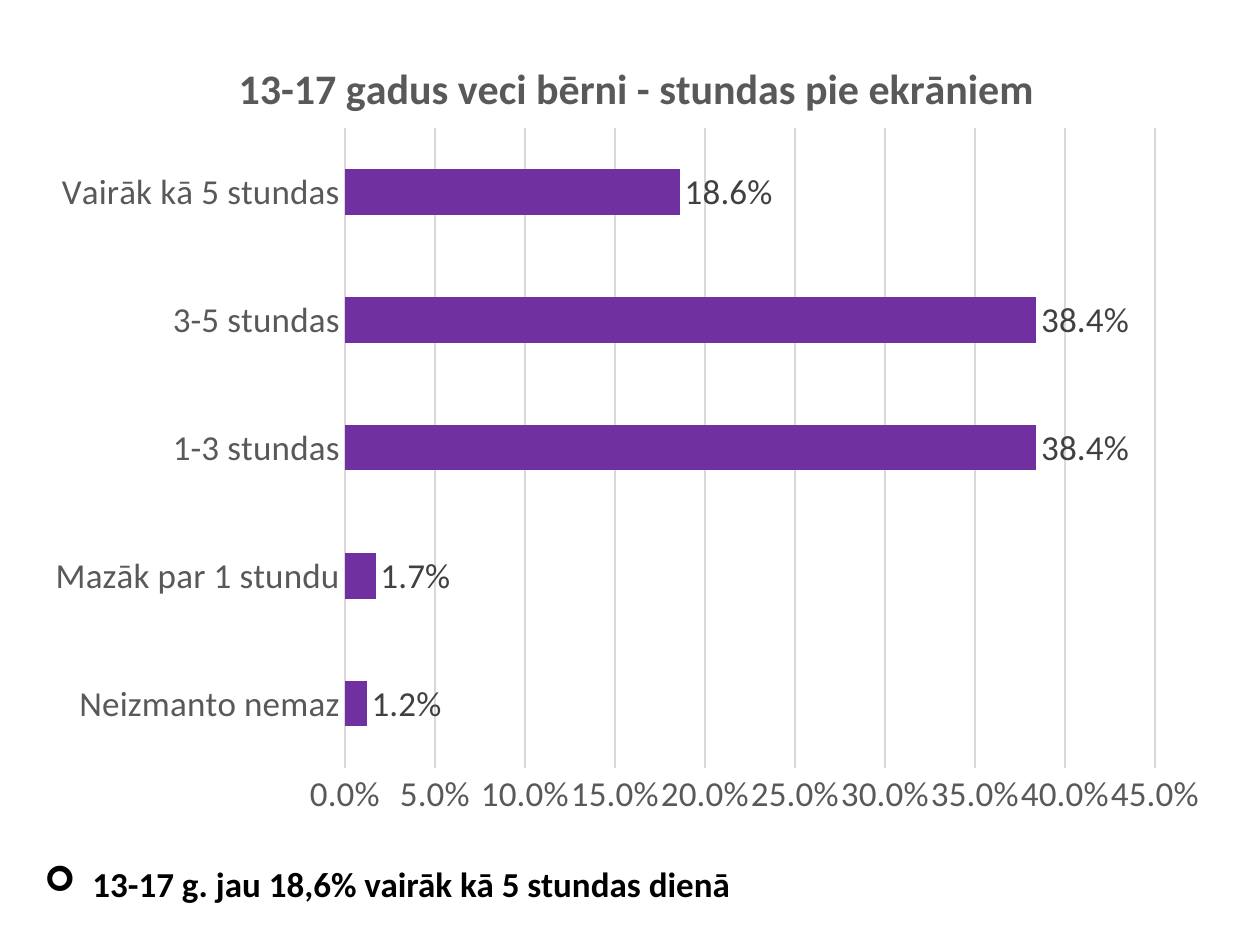
"""Build a slide with a bar chart of screen hours among 13-17 year olds."""
from dataclasses import dataclass

from lxml import etree
from pptx import Presentation, util as u
from pptx.chart import data
from pptx.dml.color import RGBColor
from pptx.enum import chart as charts, text
from pptx.oxml import ns

PX = u.Inches(1) / 126


@dataclass(frozen=True)
class Theme:
    font: str = "Calibri"
    body: int = 20
    heading: int = 24
    ink: str = "000000"
    label: str = "404040"
    muted: str = "595959"
    grid: str = "D9D9D9"
    bar: str = "7030A0"


theme = Theme()


def write(frame, content, **style):
    """Put content in the first paragraph, or only style a bare font owner."""
    font = frame.font if content is None else None
    if font is None:
        para = frame.paragraphs[0]
        span = para.add_run()
        span.text = content
        font = span.font
    font.name = theme.font
    font.size = u.Pt(style.get("size", theme.body))
    font.bold = style.get("bold", False)
    font.color.rgb = RGBColor.from_string(style.get("color", theme.ink))


def place(element, index, **fractions):
    """Give a chart part a manual layout."""
    for old in element.findall(ns.qn("c:layout")):
        element.remove(old)
    layout = etree.Element(ns.qn("c:layout"))
    manual = etree.SubElement(layout, ns.qn("c:manualLayout"))
    if "w" in fractions:
        etree.SubElement(manual, ns.qn("c:layoutTarget"), val="inner")
    for name in "xy":
        etree.SubElement(manual, ns.qn(f"c:{name}Mode"), val="edge")
    for name, value in fractions.items():
        etree.SubElement(manual, ns.qn(f"c:{name}"), val=f"{value:.4f}")
    element.insert(index, layout)


deck = Presentation()
deck.slide_width, deck.slide_height = round(1260 * PX), round(945 * PX)
page = deck.slides.add_slide(deck.slide_layouts[6])

hours = {
    "Neizmanto nemaz": 0.012,
    "Mazāk par 1 stundu": 0.017,
    "1-3 stundas": 0.384,
    "3-5 stundas": 0.384,
    "Vairāk kā 5 stundas": 0.186,
}
table = data.CategoryChartData(number_format="0.0%")
table.categories = list(hours)
table.add_series("Series 1", list(hours.values()))

left, top, width, height = 32, 13, 1190, 820
chart = page.shapes.add_chart(
    charts.XL_CHART_TYPE.BAR_CLUSTERED,
    *(round(side * PX) for side in (left, top, width, height)), table,
).chart
write(chart, None)
chart.has_legend = False
chart.has_title = True
write(chart.chart_title.text_frame, "13-17 gadus veci bērni - stundas pie ekrāniem",
      size=theme.heading, bold=True, color=theme.muted)
place(chart.chart_title.element, 1, x=(231 - left) / width, y=(52 - top) / height)
place(chart.element.find(".//" + ns.qn("c:plotArea")), 0,
      x=(345 - left) / width, y=(128 - top) / height, w=810 / width, h=640 / height)

for axis in (chart.category_axis, chart.value_axis):
    axis.major_tick_mark = axis.minor_tick_mark = charts.XL_TICK_MARK.NONE
    write(axis.tick_labels, None, color=theme.muted)

values = chart.value_axis
values.minimum_scale, values.maximum_scale, values.major_unit = 0, 0.45, 0.05
values.tick_labels.number_format = "0.0%"
values.tick_labels.number_format_is_linked = False
values.format.line.fill.background()
values.has_major_gridlines = True
for line in (values.major_gridlines.format.line, chart.category_axis.format.line):
    line.color.rgb = RGBColor.from_string(theme.grid)
    line.width = u.Pt(0.75)

plot = chart.plots[0]
plot.gap_width = 182
plot.vary_by_categories = False
bars = plot.series[0]
bars.format.fill.solid()
bars.format.fill.fore_color.rgb = RGBColor.from_string(theme.bar)
labels = bars.data_labels
labels.show_value = True
labels.position = charts.XL_LABEL_POSITION.OUTSIDE_END
labels.number_format = "0.0%"
labels.number_format_is_linked = False
write(labels, None, color=theme.label)

box = page.shapes.add_textbox(*(round(side * PX) for side in (32, 856, 1228, 55)))
box.text_frame.word_wrap = True
box.text_frame.auto_size = text.MSO_AUTO_SIZE.SHAPE_TO_FIT_TEXT
write(box.text_frame, "13-17 g. jau 18,6% vairāk kā 5 stundas dienā", bold=True)
indent = round(48 * PX)
bullet = box.text_frame.paragraphs[0]._p.get_or_add_pPr()
bullet.set("marL", str(indent))
bullet.set("indent", str(-indent))
etree.SubElement(bullet, ns.qn("a:buFont"), typeface="Wingdings")
etree.SubElement(bullet, ns.qn("a:buChar"), char="➢")

deck.save("out.pptx")
